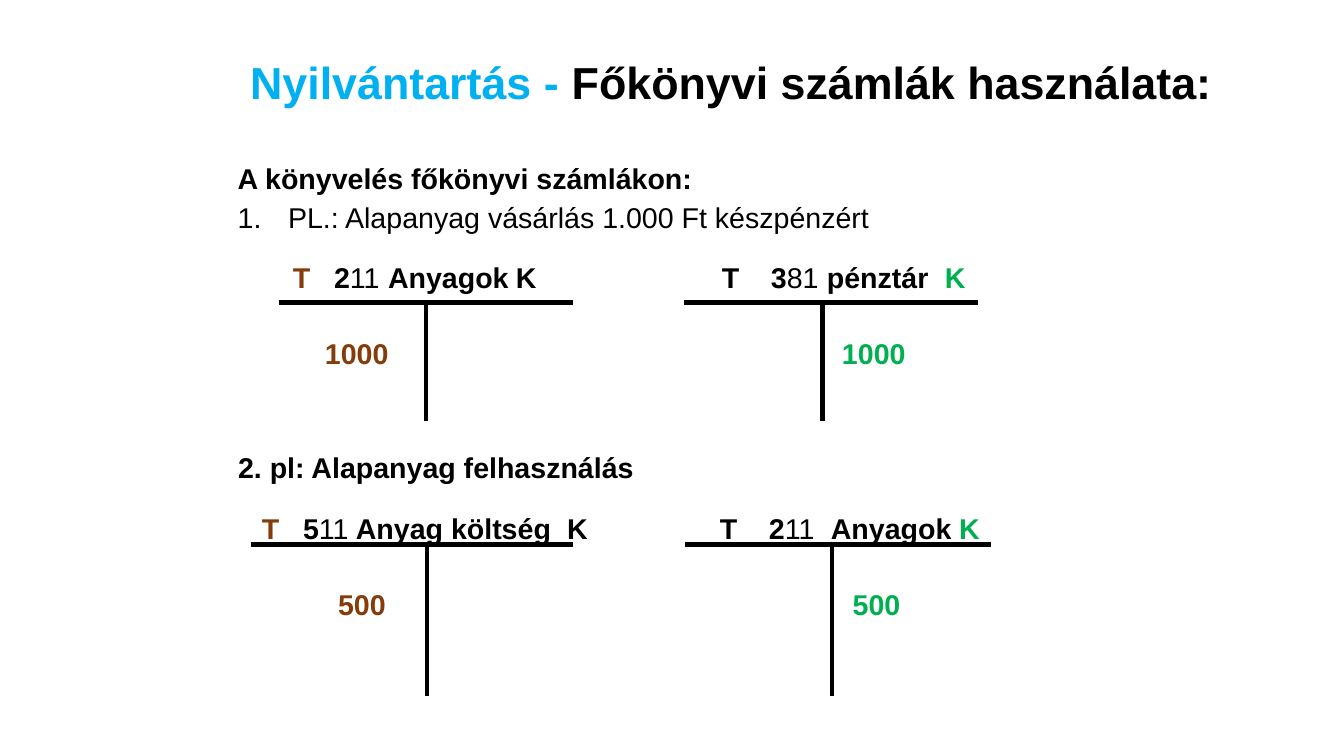
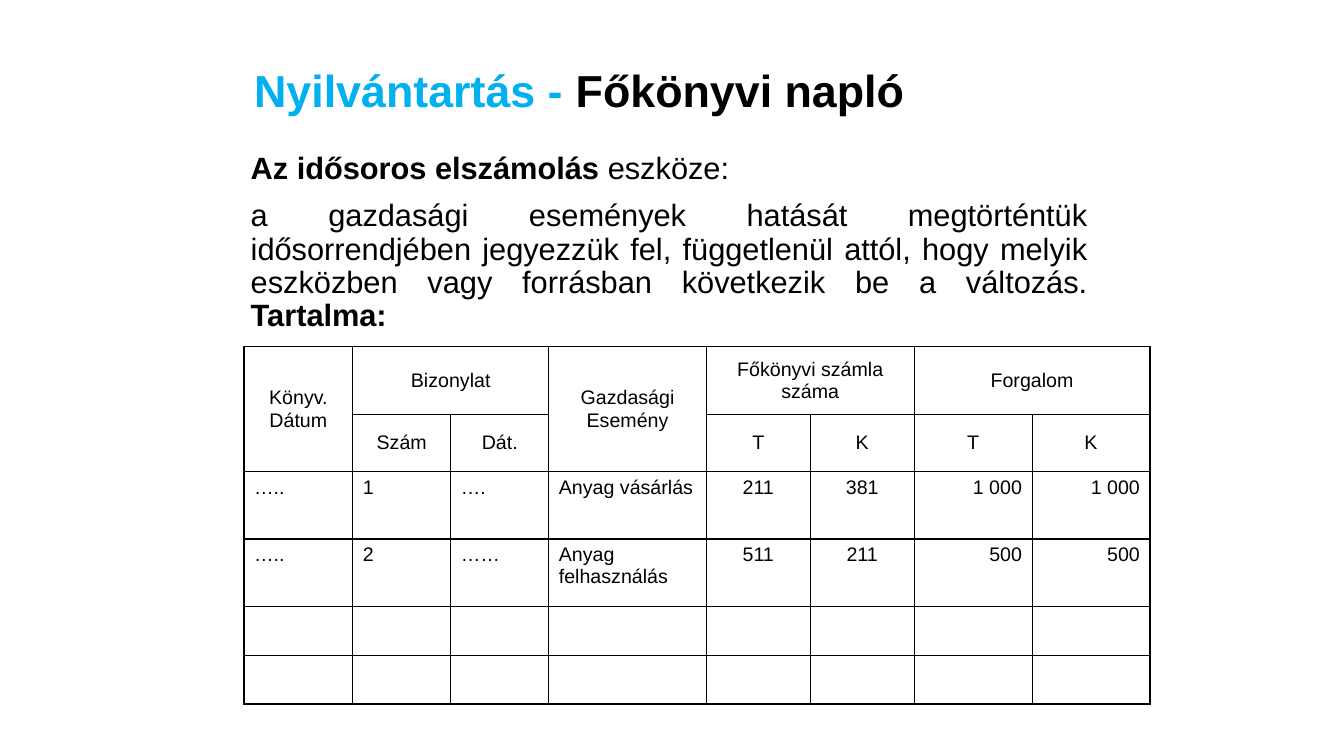
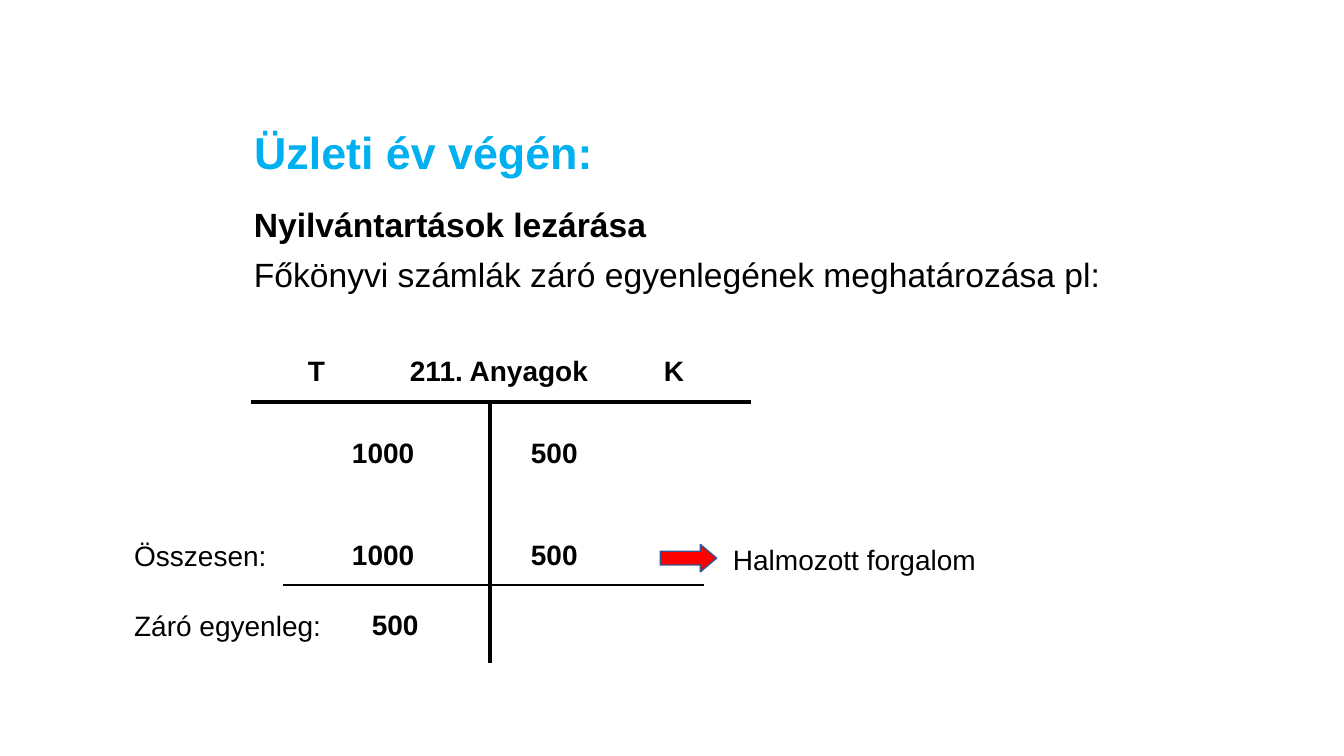
from lxml import etree
from pptx import Presentation
from pptx.dml.color import RGBColor
from pptx.enum.shapes import MSO_CONNECTOR, MSO_SHAPE
from pptx.enum.text import MSO_ANCHOR, MSO_AUTO_SIZE, PP_ALIGN
from pptx.oxml.ns import qn
from pptx.util import Cm, Pt

STRAIGHT = MSO_CONNECTOR.STRAIGHT
RIGHT_ARROW = MSO_SHAPE.RIGHT_ARROW
TOP, MIDDLE = MSO_ANCHOR.TOP, MSO_ANCHOR.MIDDLE
LEFT, CENTER, RIGHT, JUSTIFY = (
    PP_ALIGN.LEFT, PP_ALIGN.CENTER, PP_ALIGN.RIGHT, PP_ALIGN.JUSTIFY)
FIXED_SIZE = MSO_AUTO_SIZE.NONE

BLACK = RGBColor(0x00, 0x00, 0x00)
WHITE = RGBColor(0xFF, 0xFF, 0xFF)
SKY = RGBColor(0x00, 0xB0, 0xF0)
BROWN = RGBColor(0x84, 0x3C, 0x0B)
GREEN = RGBColor(0x00, 0xB0, 0x50)
RED = RGBColor(0xFF, 0x00, 0x00)
NAVY = RGBColor(0x32, 0x54, 0x91)

FONT = "Arial"
TITLE_SIZE, ACCOUNT_SIZE, LABEL_SIZE, TABLE_SIZE = 32, 20.4, 20, 14
LABEL_HEIGHT = 0.9
TITLE_LEFT, TITLE_WIDTH, TITLE_HEIGHT = 6.15, 21.59, 2.79


# Text
def write(para, spans, size, bold=False):
    """Fill a paragraph with spans given as (text, bold, colour) or text."""
    for item in spans:
        text, is_bold, color = (item, bold, BLACK) if isinstance(item, str) else item
        span = para.add_run()
        span.text = text
        for name, value in {"name": FONT, "size": Pt(size), "bold": is_bold}.items():
            setattr(span.font, name, value)
        span.font.color.rgb = color


def format_paragraph(para, **values):
    for name, value in values.items():
        setattr(para, name, value)


def add_number(para, indent):
    properties = para._p.get_or_add_pPr()
    properties.set("marL", str(Cm(indent)))
    properties.set("indent", str(-Cm(indent)))
    etree.SubElement(properties, qn("a:buFont"), typeface="+mj-lt")
    etree.SubElement(properties, qn("a:buAutoNum"), type="arabicPeriod")


def add_tabs(para, stops):
    tabs = etree.SubElement(para._p.get_or_add_pPr(), qn("a:tabLst"))
    for stop in stops:
        etree.SubElement(tabs, qn("a:tab"), pos=str(Cm(stop)), algn="l")


def add_text_frame(page, left, top, width, height):
    box = page.shapes.add_textbox(Cm(left), Cm(top), Cm(width), Cm(height))
    box.text_frame.word_wrap = True
    return box.text_frame


def add_label(page, left, middle, width, spans, size=LABEL_SIZE, bold=False, stops=()):
    """One line of text, centred on a height, starting exactly at left."""
    frame = add_text_frame(page, left, middle - LABEL_HEIGHT / 2, width, LABEL_HEIGHT)
    for side in ("left", "top", "right", "bottom"):
        setattr(frame, f"margin_{side}", 0)
    frame.vertical_anchor = MIDDLE
    para = frame.paragraphs[0]
    if stops:
        add_tabs(para, [stop - left for stop in stops])
    write(para, spans, size, bold)


def add_body(page, left, top, width, height, paragraphs, size, align=LEFT,
             line_spacing=0.9, gap=10, numbered=()):
    frame = add_text_frame(page, left, top, width, height)
    for index, spans in enumerate(paragraphs):
        para = frame.add_paragraph() if index else frame.paragraphs[0]
        if index in numbered:
            add_number(para, 1.27)
        format_paragraph(para, alignment=align, line_spacing=line_spacing,
                         space_before=Pt(gap if index else 0))
        write(para, spans, size)


def add_page(deck, top, spans, left=TITLE_LEFT, width=TITLE_WIDTH):
    page = deck.slides.add_slide(deck.slide_layouts[5])
    title = page.shapes.title
    place = {"left": left, "top": top, "width": width, "height": TITLE_HEIGHT}
    for name, value in place.items():
        setattr(title, name, Cm(value))
    frame = title.text_frame
    frame.word_wrap = True
    frame.auto_size = FIXED_SIZE
    frame.vertical_anchor = MIDDLE
    format_paragraph(frame.paragraphs[0], alignment=LEFT, line_spacing=0.9)
    write(frame.paragraphs[0], spans, TITLE_SIZE, bold=True)
    return page


# Lines and accounts
def add_line(page, x1, y1, x2, y2, weight=3):
    line = page.shapes.add_connector(STRAIGHT, Cm(x1), Cm(y1), Cm(x2), Cm(y2))
    line.line.color.rgb = BLACK
    line.line.width = Pt(weight)
    etree.SubElement(line._element.spPr, qn("a:effectLst"))


def add_t_lines(page, left, right, top, stem, bottom):
    add_line(page, left, top, right, top)
    add_line(page, stem, top, stem, bottom)


def add_account(page, lines, middle, columns, words, colors, amount):
    """Ledger account: T lines, heading in four tabbed columns, one amount."""
    add_t_lines(page, *lines)
    start, *stops = columns
    number, name = words
    debit_color, credit_color = colors
    spans = [("T\t" + number[0], True, BLACK), (number[1:], False, BLACK),
             ("\t" + name, True, BLACK), ("\tK", True, credit_color)]
    spans[:1] = [("T", True, debit_color), ("\t" + number[0], True, BLACK)]
    add_label(page, start, middle, stops[-1] - start + 1, spans, ACCOUNT_SIZE, stops=stops)
    text, amount_left, color = amount
    add_label(page, amount_left, middle + 1.92, 2, [(text, True, color)], ACCOUNT_SIZE)


# Table
def format_cell(cell, text, align, anchor):
    cell.fill.solid()
    cell.fill.fore_color.rgb = WHITE
    cell.vertical_anchor = anchor
    para = cell.text_frame.paragraphs[0]
    para.alignment = align
    if text:
        write(para, [text], TABLE_SIZE)
    properties = cell._tc.get_or_add_tcPr()
    for index, tag in enumerate(("a:lnL", "a:lnR", "a:lnT", "a:lnB")):
        border = etree.Element(qn(tag), w=str(Pt(1)))
        fill = etree.SubElement(border, qn("a:solidFill"))
        etree.SubElement(fill, qn("a:srgbClr"), val=str(BLACK))
        properties.insert(index, border)


def add_journal(page, left, top, widths, heights, rows, merges, header_rows, aligns):
    table = page.shapes.add_table(len(heights), len(widths), Cm(left), Cm(top),
                                  Cm(sum(widths)), Cm(sum(heights))).table
    table.first_row = table.horz_banding = False
    for column, width in zip(table.columns, widths):
        column.width = Cm(width)
    for row, height in zip(table.rows, heights):
        row.height = Cm(height)
    for r, texts in enumerate(rows):
        header = r < header_rows
        for c, text in enumerate(texts):
            format_cell(table.cell(r, c), text, CENTER if header else aligns[c],
                        MIDDLE if header else TOP)
    for first, last in merges:
        table.cell(*first).merge(table.cell(*last))


# Slides
def build_accounts(deck):
    page = add_page(deck, 0.74, [("Nyilvántartás - ", True, SKY),
                                 "Főkönyvi számlák használata:"], 6.05, 26.29)
    add_body(page, 5.74, 3.93, 21.59, 2.2,
             [[("A könyvelés főkönyvi számlákon:", True, BLACK)],
              ["PL.: Alapanyag vásárlás 1.000 Ft készpénzért"]],
             ACCOUNT_SIZE, line_spacing=1.0, gap=3.7, numbered=(1,))
    add_label(page, 6, 11.77, 14, ["2. pl: Alapanyag felhasználás"], ACCOUNT_SIZE, True)

    debit, credit = (BROWN, BLACK), (BLACK, GREEN)
    accounts = [
        ((7.04, 14.43, 7.62, 10.74, 10.62), 6.98, (7.38, 8.42, 9.78, 13),
         ("211", "Anyagok"), debit, ("1000", 8.19, BROWN)),
        ((17.25, 24.64, 7.62, 20.73, 10.62), 6.98, (18.19, 19.43, 20.84, 23.81),
         ("381", "pénztár"), credit, ("1000", 21.22, GREEN)),
        ((6.32, 14.45, 13.72, 10.77, 17.53), 13.3, (6.6, 7.64, 8.97, 14.29),
         ("511", "Anyag költség"), debit, ("500", 8.52, BROWN)),
        ((17.27, 24.97, 13.72, 20.96, 17.53), 13.3, (18.14, 19.38, 20.94, 24.17),
         ("211", "Anyagok"), credit, ("500", 21.49, GREEN)),
    ]
    for account in accounts:
        add_account(page, *account)


def build_journal(deck):
    page = add_page(deck, 0.94, [("Nyilvántartás - ", True, SKY), "Főkönyvi napló"])
    add_body(page, 6.07, 3.73, 21.59, 4.9,
             [[("Az idősoros elszámolás", True, BLACK), " eszköze:"],
              ["a gazdasági események hatását megtörténtük idősorrendjében jegyezzük fel, "
               "függetlenül attól, hogy melyik eszközben vagy forrásban következik be a "
               "változás. ", ("Tartalma:", True, BLACK)]],
             22, JUSTIFY)
    blank = [""] * 8
    rows = [
        ["Könyv. Dátum", "Bizonylat", "", "Gazdasági Esemény",
         "Főkönyvi számla száma", "", "Forgalom", ""],
        ["", "Szám", "Dát.", "", "T", "K", "T", "K"],
        ["…..", "1", "….", "Anyag vásárlás", "211", "381", "1 000", "1 000"],
        ["…..", "2", "……", "Anyag felhasználás", "511", "211", "500", "500"],
        blank, blank,
    ]
    merges = [((0, c), (1, c)) for c in (0, 3)] + [((0, c), (0, c + 1)) for c in (1, 4, 6)]
    add_journal(page, 6.15, 8.74,
                widths=(2.74, 2.47, 2.47, 3.97, 2.62, 2.62, 2.97, 2.97),
                heights=(1.7, 1.37, 1.7, 1.7, 1.23, 1.23),
                rows=rows, merges=merges, header_rows=2,
                aligns=[LEFT] * 4 + [CENTER] * 2 + [RIGHT] * 2)


def build_closing(deck):
    page = add_page(deck, 2.51, [("Üzleti év végén:", True, SKY)])
    add_body(page, 6.15, 5.13, 24.21, 3,
             [[("Nyilvántartások lezárása", True, BLACK)],
              ["Főkönyvi számlák záró egyenlegének meghatározása pl:"]], 24)

    # Account with its totals
    add_t_lines(page, 6.32, 18.92, 10.13, 12.34, 16.71)
    add_line(page, 7.14, 14.73, 17.73, 14.73, 1.5)
    add_label(page, 7.76, 9.32, 10.5, ["T\t211. Anyagok\tK"], bold=True,
              stops=(10.33, 16.73))
    for middle in (11.41, 13.96):
        add_label(page, 8.87, middle, 6.5, ["1000\t500"], bold=True, stops=(13.38,))
    add_label(page, 9.37, 15.72, 2, ["500"], bold=True)

    # Captions
    add_label(page, 3.38, 14, 4, ["Összesen:"])
    add_label(page, 3.38, 15.75, 5.5, ["Záró egyenleg:"])
    add_label(page, 18.47, 14.1, 7.5, ["Halmozott forgalom"])
    arrow = page.shapes.add_shape(RIGHT_ARROW, Cm(16.64), Cm(13.72), Cm(1.42), Cm(0.69))
    arrow.shadow.inherit = False
    arrow.adjustments[1] = 0.59
    arrow.fill.solid()
    arrow.fill.fore_color.rgb = RED
    arrow.line.color.rgb = NAVY
    arrow.line.width = Pt(1)


def main():
    deck = Presentation()
    deck.slide_width, deck.slide_height = Cm(33.87), Cm(19.05)
    build_accounts(deck)
    build_journal(deck)
    build_closing(deck)
    deck.save("out.pptx")


if __name__ == "__main__":
    main()
